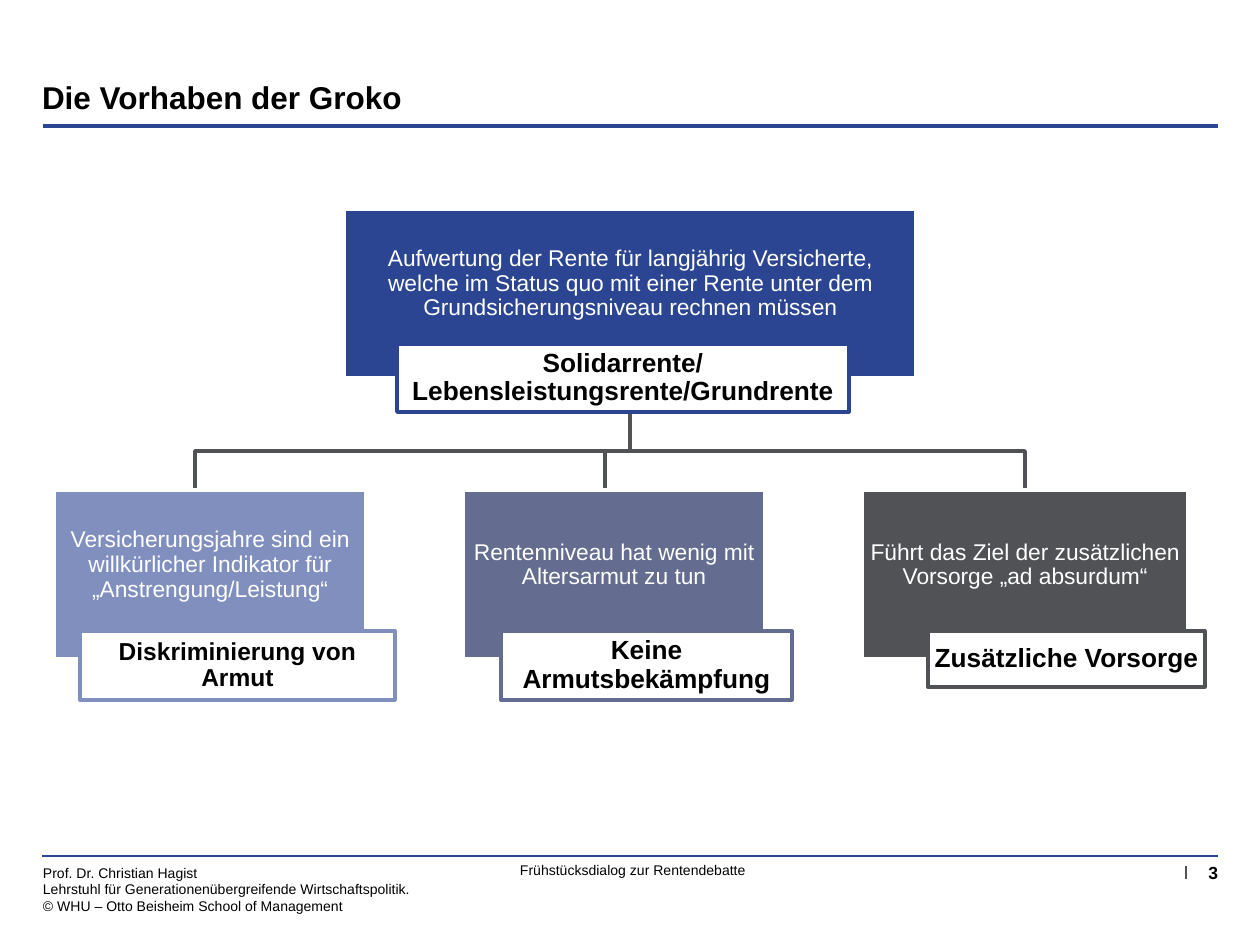
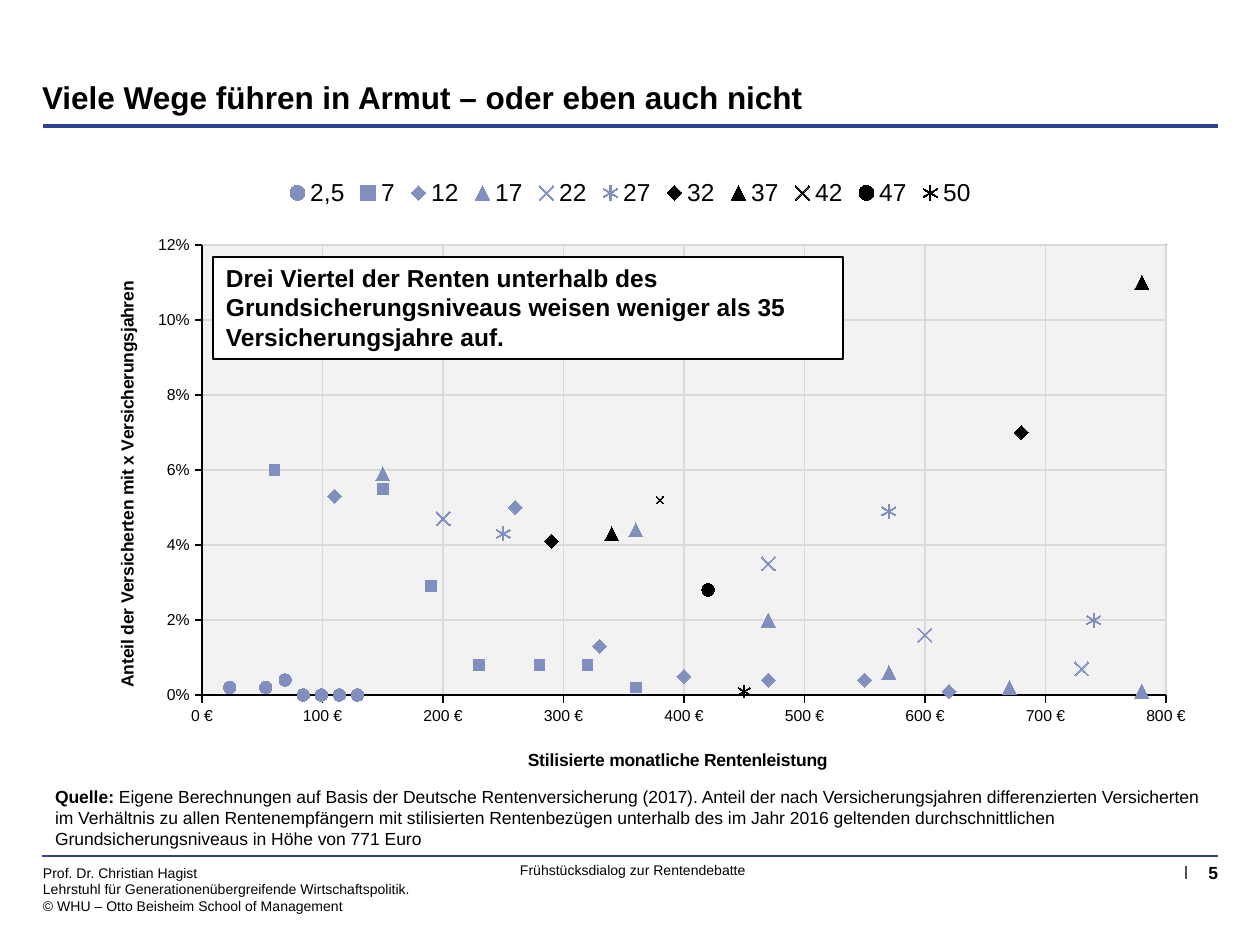
from pptx import Presentation
from pptx.chart.data import XyChartData
from pptx.dml.color import RGBColor
from pptx.enum.chart import XL_CHART_TYPE, XL_LEGEND_POSITION, XL_MARKER_STYLE as MARK, XL_TICK_MARK
from pptx.enum.shapes import MSO_CONNECTOR, MSO_SHAPE
from pptx.enum.text import MSO_ANCHOR as ANCHOR, PP_ALIGN as ALIGN
from pptx.oxml import parse_xml
from pptx.oxml.ns import nsdecls, qn
from pptx.oxml.xmlchemy import OxmlElement
from pptx.util import Pt

SCALE = 914400 / 126
FONT = "Arial"
BLACK, WHITE, NAVY, PERI, SLATE, GRAY = "000000", "FFFFFF", "2C4592", "808FBE", "646D8F", "515256"
GRID, PLOT_BG = "D9D9D9", "F2F2F2"
DEFAULT_INSETS = (13, 6, 13, 6)
FOOTER_INSETS = (10, 10, 10, 10)

AUTHOR = ["Prof. Dr. Christian Hagist",
          "Lehrstuhl für Generationenübergreifende Wirtschaftspolitik.",
          "© WHU – Otto Beisheim School of Management"]
EVENT = "Frühstücksdialog zur Rentendebatte"
RULES = [((42, 856), (1218, 856), NAVY, 0.75),
         ((43, 126), (1218, 126), NAVY, 2.25),
         ((1186, 866), (1186, 879), GRAY, 0.75)]

PLANS = [
    ("Aufwertung der Rente für langjährig Versicherte,\nwelche im Status quo mit einer Rente unter dem "
     "Grundsicherungsniveau rechnen müssen", (344, 209, 572, 169), NAVY,
     "Solidarrente/Lebensleistungsrente/Grundrente", (397, 344, 452, 68), 15),
    ("Versicherungsjahre sind ein willkürlicher Indikator für „Anstrengung/Leistung“",
     (54, 490, 312, 169), PERI, "Diskriminierung von Armut", (80, 631, 315, 69), 14),
    ("Rentenniveau hat wenig mit Altersarmut zu tun",
     (463, 490, 302, 169), SLATE, "Keine Armutsbekämpfung", (501, 631, 291, 69), 15),
    ("Führt das Ziel der zusätzlichen Vorsorge „ad absurdum“",
     (862, 490, 326, 169), GRAY, "Zusätzliche Vorsorge", (928, 631, 277, 56), 15),
]
TRUNK_X, TRUNK_TOP, BRANCH_Y, BRANCH_END = 630, 393, 451, 490
BRANCH_XS = (1025, 605, 195)

SERIES = [
    ("2,5", MARK.CIRCLE, 7, PERI, [(23, 0.002), (53, 0.002), (69, 0.004), (84, 0), (99, 0), (114, 0), (129, 0)]),
    ("7", MARK.SQUARE, 6, PERI, [(60, 0.06), (150, 0.055), (190, 0.029), (230, 0.008), (280, 0.008),
                                 (320, 0.008), (360, 0.002)]),
    ("12", MARK.DIAMOND, 8, PERI, [(110, 0.053), (260, 0.05), (330, 0.013), (400, 0.005), (470, 0.004),
                                   (550, 0.004), (620, 0.001)]),
    ("17", MARK.TRIANGLE, 8, PERI, [(150, 0.059), (360, 0.044), (470, 0.02), (570, 0.006), (670, 0.002),
                                    (780, 0.001)]),
    ("22", MARK.X, 8, PERI, [(200, 0.047), (470, 0.035), (600, 0.016), (730, 0.007)]),
    ("27", MARK.STAR, 8, PERI, [(250, 0.043), (570, 0.049), (740, 0.02)]),
    ("32", MARK.DIAMOND, 8, BLACK, [(290, 0.041), (680, 0.07)]),
    ("37", MARK.TRIANGLE, 8, BLACK, [(340, 0.043), (780, 0.11)]),
    ("42", MARK.X, 4, BLACK, [(380, 0.052)]),
    ("47", MARK.CIRCLE, 7, BLACK, [(420, 0.028)]),
    ("50", MARK.STAR, 7, BLACK, [(450, 0.001)]),
]
X_AXIS = ("Stilisierte monatliche Rentenleistung", 800, 100, '#,##0\\ "€"', (0.41, 0.87), 0)
Y_AXIS = ("Anteil der Versicherten mit x Versicherungsjahren", 0.12, 0.02, "0%", (0.06, 0.17), -90)
CALLOUT = ("Drei Viertel der Renten unterhalb des Grundsicherungsniveaus weisen weniger als 35 "
           "Versicherungsjahre auf.")
SOURCE_LABEL = "Quelle: "
SOURCE = ("Eigene Berechnungen auf Basis der Deutsche Rentenversicherung (2017). Anteil der nach "
          "Versicherungsjahren differenzierten Versicherten im Verhältnis zu allen Rentenempfängern mit "
          "stilisierten Rentenbezügen unterhalb des im Jahr 2016 geltenden durchschnittlichen "
          "Grundsicherungsniveaus in Höhe von 771 Euro")


def px(*lengths):
    return [round(n * SCALE) for n in lengths]


def rgb(color):
    return RGBColor.from_string(color)


def set_font(font, size, color=BLACK, bold=False):
    font.name, font.size, font.bold = FONT, Pt(size), bold
    font.color.rgb = rgb(color)


def set_line(line, color, width):
    line.color.rgb = rgb(color)
    line.width = Pt(width)


def write(tf, paragraphs, size, color=BLACK, align=ALIGN.LEFT, anchor=ANCHOR.TOP,
          insets=DEFAULT_INSETS, spacing=None, wrap=True):
    tf.word_wrap, tf.vertical_anchor = wrap, anchor
    tf.margin_left, tf.margin_top, tf.margin_right, tf.margin_bottom = px(*insets)
    for i, runs in enumerate(paragraphs):
        p = tf.add_paragraph() if i else tf.paragraphs[0]
        p.alignment = align
        if spacing:
            p.line_spacing = spacing
        for text, bold in runs:
            for j, line in enumerate(text.split("\n")):
                if j:
                    p.add_line_break()
                r = p.add_run()
                r.text = line
                set_font(r.font, size, color, bold)


def add_text(s, box, paragraphs, size, **style):
    write(s.shapes.add_textbox(*px(*box)).text_frame, paragraphs, size, **style)


def add_box(s, box, fill, line, width, text, size, bold, **style):
    sp = s.shapes.add_shape(MSO_SHAPE.RECTANGLE, *px(*box))
    sp.shadow.inherit = False
    sp.fill.solid()
    sp.fill.fore_color.rgb = rgb(fill)
    set_line(sp.line, line, width)
    write(sp.text_frame, [[(text, bold)]], size, **style)


def add_rule(s, start, end, color, width):
    cx = s.shapes.add_connector(MSO_CONNECTOR.STRAIGHT, *px(*start, *end))
    set_line(cx.line, color, width)
    cx.element.spPr.append(OxmlElement("a:effectLst"))


def add_slide(prs, title, number):
    s = prs.slides.add_slide(prs.slide_layouts[5])
    sp = s.shapes.title
    sp.left, sp.top, sp.width, sp.height = px(42, 30, 956, 86)
    write(sp.text_frame, [[(title, True)]], 18, anchor=ANCHOR.BOTTOM, insets=(0, 0, 0, 0))
    add_text(s, (33, 854, 392, 71), [[(line, False)] for line in AUTHOR], 8,
             insets=FOOTER_INSETS, wrap=False)
    add_text(s, (459, 853, 348, 35), [[(EVENT, False)]], 8, align=ALIGN.CENTER,
             insets=FOOTER_INSETS, wrap=False)
    add_text(s, (1116, 852, 112, 37), [[(number, True)]], 10, align=ALIGN.RIGHT, insets=FOOTER_INSETS)
    for rule in RULES:
        add_rule(s, *rule)
    return s


def add_plans(s):
    for x in BRANCH_XS:
        path = s.shapes.build_freeform(TRUNK_X, TRUNK_TOP, scale=SCALE)
        path.add_line_segments([(TRUNK_X, BRANCH_Y), (x, BRANCH_Y), (x, BRANCH_END)], close=False)
        sp = path.convert_to_shape()
        sp.shadow.inherit = False
        sp.fill.background()
        set_line(sp.line, GRAY, 2)
    centred = dict(align=ALIGN.CENTER, anchor=ANCHOR.MIDDLE, spacing=0.9)
    for text, box, color, label, label_box, label_size in PLANS:
        add_box(s, box, color, WHITE, 2, text, 13, False, color=WHITE, insets=(1, 1, 1, 20), **centred)
        add_box(s, label_box, WHITE, color, 2, label, label_size, True, insets=(5, 1, 5, 1), **centred)


def set_layout(parent, **values):
    old = parent.find(qn("c:layout"))
    if old is not None:
        parent.remove(old)
    items = "".join(f'<c:{k} val="{v}"/>' for k, v in values.items())
    layout = parse_xml(f'<c:layout {nsdecls("c")}><c:manualLayout>{items}</c:manualLayout></c:layout>')
    parent.insert(len(parent.findall(qn("c:tx"))), layout)


def area_format(fill, line):
    stroke = f'<a:solidFill><a:srgbClr val="{line}"/></a:solidFill>' if line else "<a:noFill/>"
    return parse_xml(f'<c:spPr {nsdecls("c", "a")}><a:solidFill><a:srgbClr val="{fill}"/></a:solidFill>'
                     f'<a:ln w="9525">{stroke}</a:ln></c:spPr>')


def format_axis(axis, title, top, step, number_format, place, angle):
    axis.minimum_scale, axis.maximum_scale, axis.major_unit = 0, top, step
    axis.major_tick_mark, axis.minor_tick_mark = XL_TICK_MARK.OUTSIDE, XL_TICK_MARK.NONE
    axis.has_major_gridlines = True
    set_line(axis.major_gridlines.format.line, GRID, 0.75)
    set_line(axis.format.line, BLACK, 1)
    set_font(axis.tick_labels.font, 9)
    axis.tick_labels.number_format = number_format
    axis.tick_labels.number_format_is_linked = False
    heading = axis.axis_title
    r = heading.text_frame.paragraphs[0].add_run()
    r.text = title
    set_font(r.font, 10, bold=True)
    body = heading.element.find(".//" + qn("a:bodyPr"))
    body.set("rot", str(angle * 60000))
    body.set("vert", "horz")
    set_layout(heading.element, xMode="edge", yMode="edge", x=place[0], y=place[1])


def add_scatter(s):
    data = XyChartData()
    for name, *_, points in SERIES:
        series = data.add_series(name)
        for x, y in points:
            series.add_data_point(x, y)
    chart = s.shapes.add_chart(XL_CHART_TYPE.XY_SCATTER, *px(42, 165, 1177, 667), data).chart
    set_font(chart.font, 10)
    chart.has_title = False
    chart.has_legend = True
    chart.legend.position = XL_LEGEND_POSITION.TOP
    chart.legend.include_in_layout = False
    set_font(chart.legend.font, 14)
    plot = chart.plots[0]
    plot.vary_by_categories = False
    for series, (_, style, size, color, _) in zip(plot.series, SERIES):
        series.smooth = False
        series.format.line.fill.background()
        marker = series.marker
        marker.style, marker.size = style, size
        set_line(marker.format.line, color, 0.75)
        if style in (MARK.X, MARK.STAR):
            marker.format.fill.background()
        else:
            marker.format.fill.solid()
            marker.format.fill.fore_color.rgb = rgb(color)
    format_axis(chart.category_axis, *X_AXIS)
    format_axis(chart.value_axis, *Y_AXIS)
    frame = chart.element.find(qn("c:chart"))
    frame.addnext(area_format(WHITE, None))
    area = frame.find(qn("c:plotArea"))
    area.append(area_format(PLOT_BG, BLACK))
    set_layout(area, layoutTarget="inner", xMode="edge", yMode="edge", x=0.136, y=0.12, w=0.819, h=0.675)


def main():
    prs = Presentation()
    prs.slide_width, prs.slide_height = px(1260, 945)
    add_plans(add_slide(prs, "Die Vorhaben der Groko", "3"))
    s = add_slide(prs, "Viele Wege führen in Armut – oder eben auch nicht", "5")
    add_scatter(s)
    add_text(s, (42, 780, 1177, 77), [[(SOURCE_LABEL, True), (SOURCE, False)]], 10)
    add_box(s, (213, 257, 630, 102), WHITE, BLACK, 0.75, CALLOUT, 14, True)
    prs.save("out.pptx")


if __name__ == "__main__":
    main()
